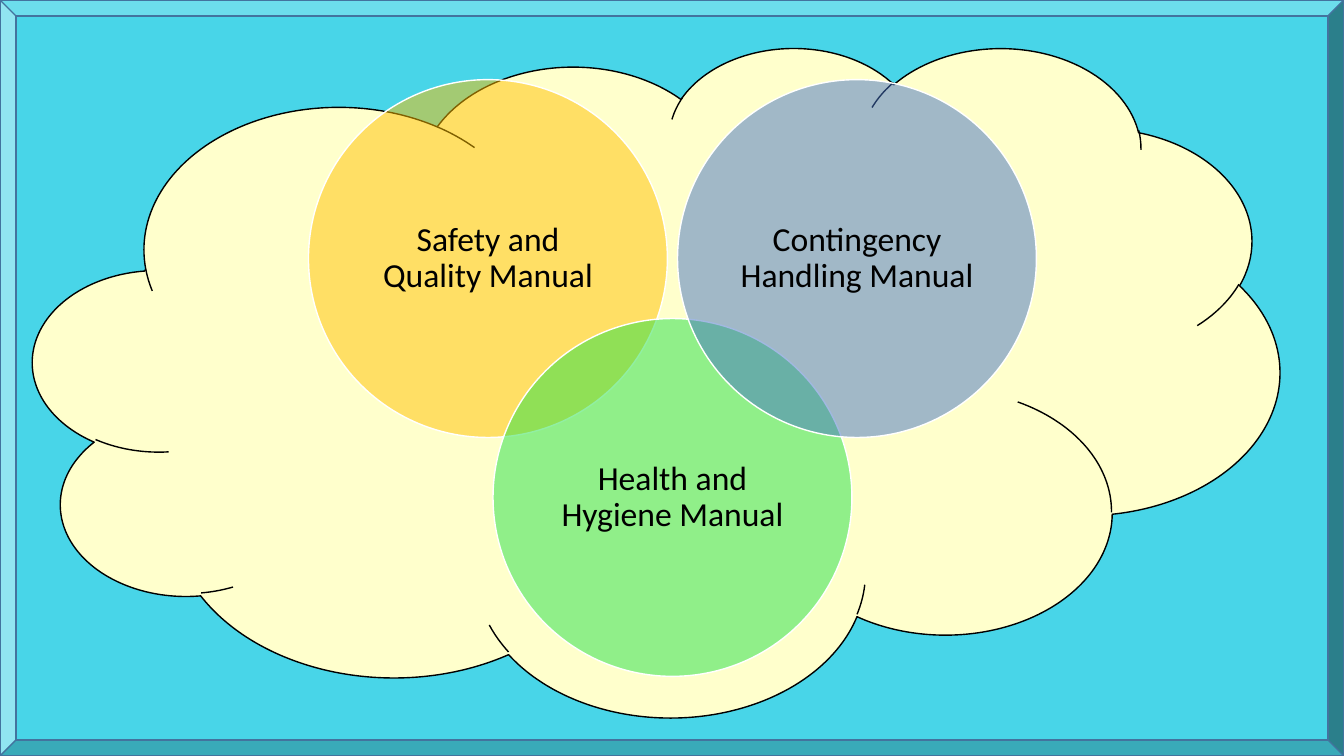
import pptx
import pptx.util
import pptx.dml.color
import pptx.enum.shapes
import pptx.enum.text
import pptx.oxml
import pptx.oxml.ns

Inches = pptx.util.Inches
Shape = pptx.enum.shapes.MSO_SHAPE

COLORS = {
    "frame": "48D5E8",
    "frame_line": "43739E",
    "cloud": "FFFFCC",
    "safety": "FFC000",
    "health": "23E148",
    "contingency": "4472C4",
    "text": "000000",
    "white": "FFFFFF",
}


def color(name):
    return pptx.dml.color.RGBColor.from_string(COLORS[name])


class SlideBuilder:
    font = "Calibri"
    text_size = pptx.util.Pt(24)
    line_width = pptx.util.Pt(1)

    def __init__(self, page):
        self.page = page

    def shape(self, kind, left, top, width, height, fill, line, opacity=None, parent=None):
        shapes = (parent or self.page).shapes
        item = shapes.add_shape(kind, Inches(left), Inches(top), Inches(width), Inches(height))
        item.shadow.inherit = False
        item.fill.solid()
        item.fill.fore_color.rgb = color(fill)
        item.line.color.rgb = color(line)
        item.line.width = self.line_width
        if opacity is not None:
            tint = item.fill._xPr.find(".//" + pptx.oxml.ns.qn("a:srgbClr"))
            alpha = pptx.oxml.ns.qn("a:alpha")
            tint.makeelement(alpha)
            tint.append(tint.makeelement(alpha, {"val": str(opacity * 1000)}))
        return item

    def label(self, text, left, top, width, height, parent):
        box = parent.shapes.add_textbox(Inches(left), Inches(top), Inches(width), Inches(height))
        frame = box.text_frame
        frame.word_wrap = True
        frame.vertical_anchor = pptx.enum.text.MSO_ANCHOR.MIDDLE
        frame.margin_left = frame.margin_right = Inches(0.1)
        frame.margin_top = frame.margin_bottom = Inches(0.1)
        para = frame.paragraphs[0]
        para.text = text
        para.alignment = pptx.enum.text.PP_ALIGN.CENTER
        para.line_spacing = 0.9
        para.font.name = self.font
        para.font.size = self.text_size
        para.font.color.rgb = color("text")

    def circle(self, text, left, top, fill, parent):
        width, height, label_size = 3.56, 3.55, 2.51
        self.shape(Shape.OVAL, left, top, width, height, fill, "white", 50, parent)
        self.label(text, left + (width - label_size) / 2, top + (height - label_size) / 2,
                   label_size, label_size, parent)


def main():
    deck = pptx.Presentation()
    deck.slide_width, deck.slide_height = Inches(13.33), Inches(7.5)
    builder = SlideBuilder(deck.slides.add_slide(deck.slide_layouts[6]))

    # Bevelled frame and cloud
    frame = builder.shape(Shape.BEVEL, 0, 0, 13.33, 7.5, "frame", "frame_line")
    frame.adjustments[0] = 0.021
    builder.shape(Shape.CLOUD, 0.33, 0.46, 12.36, 6.64, "cloud", "text")

    # Overlapping circles, one per manual
    circles = builder.page.shapes.add_group_shape()
    first_left, step = 3.06, 1.83
    upper, lower = 0.79, 3.16
    manuals = [
        ("Safety and Quality Manual", upper, "safety"),
        ("Health and Hygiene Manual", lower, "health"),
        ("Contingency Handling Manual", upper, "contingency"),
    ]
    for index, (text, top, fill) in enumerate(manuals):
        builder.circle(text, first_left + index * step, top, fill, circles)

    deck.save("out.pptx")


if __name__ == "__main__":
    main()
